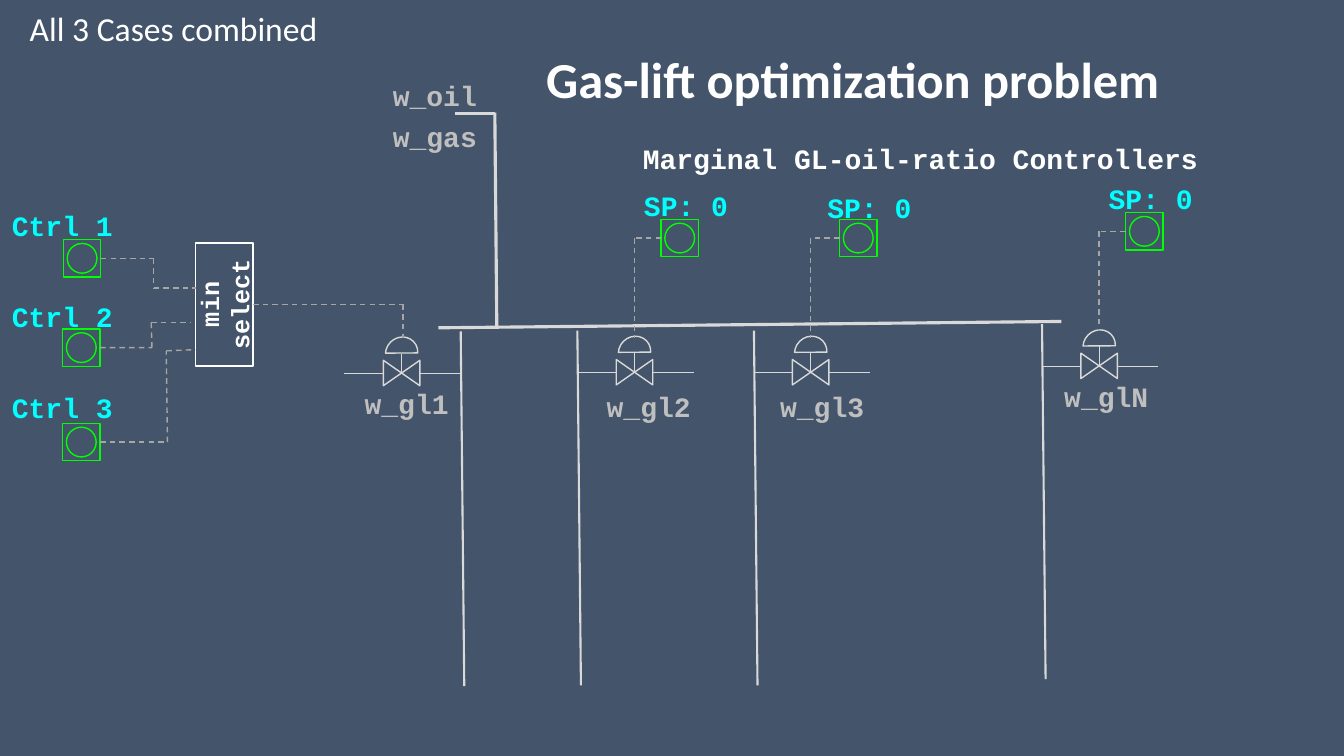
from dataclasses import dataclass
from itertools import pairwise

from lxml.etree import SubElement
from pptx import Presentation
from pptx.dml.color import RGBColor
from pptx.enum.dml import MSO_LINE as Dash
from pptx.enum.shapes import MSO_CONNECTOR as Connector, MSO_SHAPE as Shape
from pptx.enum.text import MSO_ANCHOR as Anchor, MSO_AUTO_SIZE as AutoSize, PP_ALIGN as Align
from pptx.oxml.ns import qn
from pptx.util import Cm, Pt


@dataclass(frozen=True)
class Theme:
    background: str = "44546A"
    white: str = "FFFFFF"
    pipe: str = "D9D9D9"
    signal: str = "A6A6A6"
    flow: str = "BFBFBF"
    control: str = "00FFFF"
    sensor: str = "00FF00"
    heading_font: str = "Calibri"
    label_font: str = "Courier New"
    title_size: float = 36
    subtitle_size: float = 24
    label_size: float = 20
    select_size: float = 18
    hairline: float = 0.5
    thin: float = 1
    well: float = 1.5
    header: float = 2.25


THEME = Theme()
LETTER_WIDTH = 0.43
LABEL_PADDING = 0.52
SENSOR_SIDE = 0.94
SENSOR_DIAL = 0.75
RIGHT, LEFT = 3, 1

CONTROLLERS = [
    ("Ctrl 1", 2.07, 6.51, 5.13, [(3.87, 6.51), (3.87, 7.26), (4.93, 7.26)]),
    ("Ctrl 2", 2.05, 8.76, 7.42, [(3.83, 8.76), (3.81, 8.13), (4.8, 8.13)]),
    ("Ctrl 3", 2.05, 11.14, 9.72, [(4.22, 11.14), (4.19, 8.84), (4.93, 8.81)]),
]
WELLS = [
    ("w_gl1", 10.12, 9.4, 11.61, (8.94, 9.61)),
    ("w_gl2", 15.99, 9.38, 14.55, (15.04, 9.7)),
    ("w_gl3", 20.43, 9.38, 19.0, (19.41, 9.7)),
    ("w_glN", 27.7, 9.22, 26.26, (26.57, 9.45)),
]
SETPOINTS = [
    (17.13, 6.0, (15.98, 4.62)),
    (21.63, 6.0, (20.6, 4.67)),
    (28.84, 5.83, (27.69, 4.45)),
]


def rgb(value):
    return RGBColor.from_string(value)


def write(paragraph, words, font, size, color, bold=True):
    run = paragraph.add_run()
    run.text = words
    run.font.name = font
    run.font.size = Pt(size)
    run.font.bold = bold
    run.font.color.rgb = rgb(color)


def add_label(slide, words, left, top, color):
    width = len(words) * LETTER_WIDTH + LABEL_PADDING
    label = slide.shapes.add_textbox(Cm(left), Cm(top), Cm(width), Cm(1.12))
    frame = label.text_frame
    frame.word_wrap = False
    frame.auto_size = AutoSize.SHAPE_TO_FIT_TEXT
    write(frame.paragraphs[0], words, THEME.label_font, THEME.label_size, color)


def add_outline(slide, kind, center_x, center_y, width, height, color, rotation=0):
    outline = slide.shapes.add_shape(
        kind, Cm(center_x - width / 2), Cm(center_y - height / 2), Cm(width), Cm(height))
    outline.shadow.inherit = False
    outline.fill.background()
    outline.line.color.rgb = rgb(color)
    outline.line.width = Pt(THEME.thin)
    outline.rotation = rotation
    return outline


def add_line(slide, start, end, weight, color=THEME.pipe, dash=None):
    line = slide.shapes.add_connector(
        Connector.STRAIGHT, Cm(start[0]), Cm(start[1]), Cm(end[0]), Cm(end[1]))
    line.line.color.rgb = rgb(color)
    line.line.width = Pt(weight)
    if dash:
        line.line.dash_style = dash
    SubElement(line._element.spPr, qn("a:effectLst"))
    return line


def add_signal(slide, source, side, start, bends):
    segments = [add_line(slide, a, b, THEME.thin, THEME.signal, Dash.DASH)
                for a, b in pairwise([start, *bends])]
    segments[0].begin_connect(source, side)


def add_sensor(slide, x, y):
    housing = add_outline(slide, Shape.RECTANGLE, x, y, SENSOR_SIDE, SENSOR_SIDE, THEME.sensor)
    add_outline(slide, Shape.OVAL, x, y, SENSOR_DIAL, SENSOR_DIAL, THEME.sensor)
    return housing


def add_valve(slide, x, y):
    add_outline(slide, Shape.FLOWCHART_COLLATE, x, y, 0.64, 0.92, THEME.pipe, 90)
    dome = add_outline(slide, Shape.CHORD, x, y - 0.5, 0.84, 0.79, THEME.pipe, 135.2)
    dome.adjustments[0] = 27
    dome.adjustments[1] = 134.388
    add_line(slide, (x, y - 0.49), (x, y), THEME.hairline)
    add_line(slide, (x - 0.47, y), (x - 1.44, y), THEME.hairline)
    add_line(slide, (x + 0.47, y), (x + 1.49, y), THEME.hairline)


def add_well(slide, name, valve_x, valve_y, well_x, label_at):
    top = valve_y - 1.05
    add_line(slide, (well_x, top), (well_x + 0.09, top + 8.94), THEME.well)
    add_valve(slide, valve_x, valve_y)
    add_label(slide, name, *label_at, THEME.flow)


def add_min_select(slide):
    selector = add_outline(slide, Shape.RECTANGLE, 5.65, 7.67, 1.45, 3.1, THEME.white)
    frame = selector.text_frame
    frame.word_wrap = True
    frame.vertical_anchor = Anchor.MIDDLE
    frame._txBody.bodyPr.set("vert", "vert270")
    frame.paragraphs[0].alignment = Align.CENTER
    write(frame.paragraphs[0], "min select", THEME.label_font, THEME.select_size, THEME.white)
    return selector


def add_headings(slide):
    title = slide.shapes.title
    title.left, title.top, title.width, title.height = Cm(13.51), Cm(1.09), Cm(19.84), Cm(1.8)
    subtitle = slide.shapes.add_textbox(Cm(0.5), Cm(0.08), Cm(12.9), Cm(1.28))
    for heading, words, size, bold in [
        (title, "Gas-lift optimization problem", THEME.title_size, True),
        (subtitle, "All 3 Cases combined", THEME.subtitle_size, False),
    ]:
        frame = heading.text_frame
        frame.word_wrap = True
        frame.auto_size = AutoSize.SHAPE_TO_FIT_TEXT
        frame.vertical_anchor = Anchor.TOP
        frame.paragraphs[0].alignment = Align.LEFT
        write(frame.paragraphs[0], words, THEME.heading_font, size, THEME.white, bold)


def main():
    deck = Presentation()
    deck.slide_width, deck.slide_height = Cm(33.87), Cm(19.05)
    slide = deck.slides.add_slide(deck.slide_layouts[5])
    slide.background.fill.solid()
    slide.background.fill.fore_color.rgb = rgb(THEME.background)

    add_headings(slide)
    add_label(slide, "w_oil", 9.65, 1.85, THEME.flow)
    add_label(slide, "w_gas", 9.65, 2.88, THEME.flow)
    add_label(slide, "Marginal GL-oil-ratio Controllers", 15.95, 3.45, THEME.white)

    for start, end in [((11.05, 8.26), (26.75, 8.1)),
                       ((12.52, 8.23), (12.47, 2.84)),
                       ((11.46, 2.87), (12.47, 2.87))]:
        add_line(slide, start, end, THEME.header)
    for well in WELLS:
        add_well(slide, *well)

    selector = add_min_select(slide)
    add_signal(slide, selector, RIGHT, (6.38, 7.67), [(10.16, 7.67), (10.16, 8.51)])
    for name, x, y, label_top, bends in CONTROLLERS:
        sensor = add_sensor(slide, x, y)
        add_signal(slide, sensor, RIGHT, (x + SENSOR_SIDE / 2, y), bends)
        add_label(slide, name, 0.05, label_top, THEME.control)

    for (x, y, label_at), (_, valve_x, valve_y, _, _) in zip(SETPOINTS, WELLS[1:]):
        sensor = add_sensor(slide, x, y)
        add_signal(slide, sensor, LEFT, (x - SENSOR_SIDE / 2, y),
                   [(valve_x, y), (valve_x, valve_y - 0.87)])
        add_label(slide, "SP: 0", *label_at, THEME.control)

    deck.save("out.pptx")


if __name__ == "__main__":
    main()
